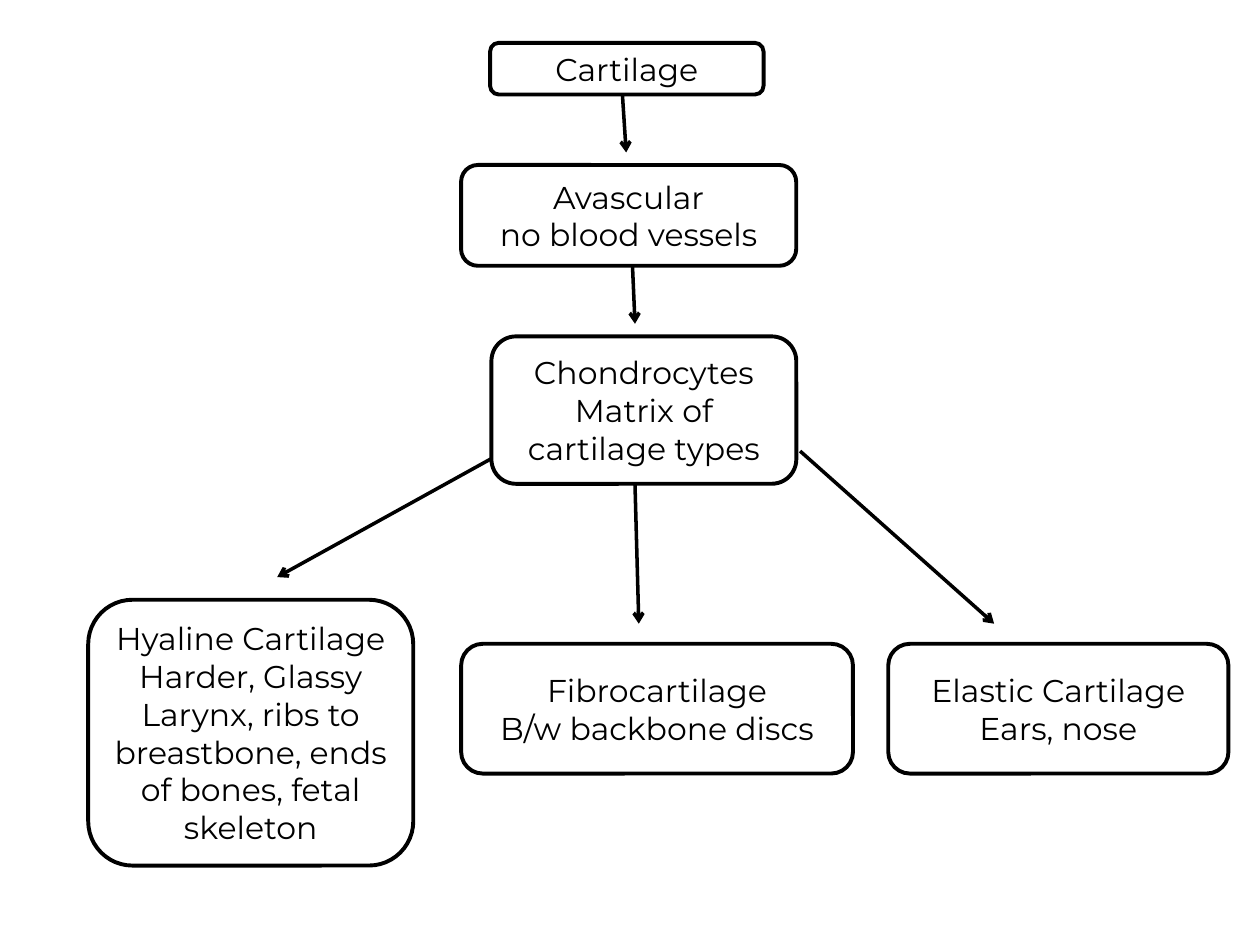
from lxml import etree
from pptx import Presentation
from pptx.dml.color import RGBColor
from pptx.enum.shapes import MSO_CONNECTOR, MSO_SHAPE
from pptx.enum.text import MSO_ANCHOR, PP_ALIGN
from pptx.oxml.ns import qn
from pptx.util import Inches, Pt


def color(hex_value):
    return RGBColor.from_string(hex_value)


INK, PAPER = "000000", "FFFFFF"

# left, top, width, height in inches, then one string per paragraph
BOXES = [
    (3.89, 0.34, 2.17, 0.41, ["Cartilage"]),
    (3.66, 1.31, 2.66, 0.8, ["Avascular", "no blood vessels"]),
    (3.9, 2.67, 2.42, 1.17, ["Chondrocytes", "Matrix of cartilage types"]),
    (0.7, 4.76, 2.58, 2.11, ["Hyaline Cartilage", "Harder, Glassy",
                             "Larynx, ribs to breastbone, ends of bones, fetal skeleton"]),
    (3.66, 5.11, 3.11, 1.03, ["Fibrocartilage", "B/w backbone discs"]),
    (7.05, 5.11, 2.7, 1.03, ["Elastic Cartilage", "Ears, nose"]),
]

# start x, start y, end x, end y in inches
ARROWS = [
    (4.94, 0.75, 4.97, 1.21),
    (5.02, 2.11, 5.04, 2.57),
    (3.9, 3.64, 2.2, 4.58),
    (5.04, 3.85, 5.07, 4.95),
    (6.35, 3.58, 7.89, 4.95),
]

deck = Presentation()
deck.slide_width, deck.slide_height = Inches(10), Inches(7.5)
page = deck.slides.add_slide(deck.slide_layouts[6])

for *place, lines in BOXES:
    box = page.shapes.add_shape(MSO_SHAPE.ROUNDED_RECTANGLE, *map(Inches, place))
    box.shadow.inherit = False
    box.fill.solid()
    box.fill.fore_color.rgb = color(PAPER)
    box.line.color.rgb = color(INK)
    box.line.width = Pt(2.25)
    frame = box.text_frame
    frame.word_wrap = True
    frame.vertical_anchor = MSO_ANCHOR.MIDDLE
    frame.text = "\n".join(lines)
    for para in frame.paragraphs:
        para.alignment = PP_ALIGN.CENTER
        para.font.name = "Montserrat"
        para.font.size = Pt(18)
        para.font.color.rgb = color(INK)

for ends in ARROWS:
    arrow = page.shapes.add_connector(MSO_CONNECTOR.STRAIGHT, *map(Inches, ends))
    arrow.line.color.rgb = color(INK)
    arrow.line.width = Pt(2)
    etree.SubElement(arrow.line._get_or_add_ln(), qn("a:tailEnd"), type="arrow")
    etree.SubElement(arrow._element.spPr, qn("a:effectLst"))

deck.save("out.pptx")
